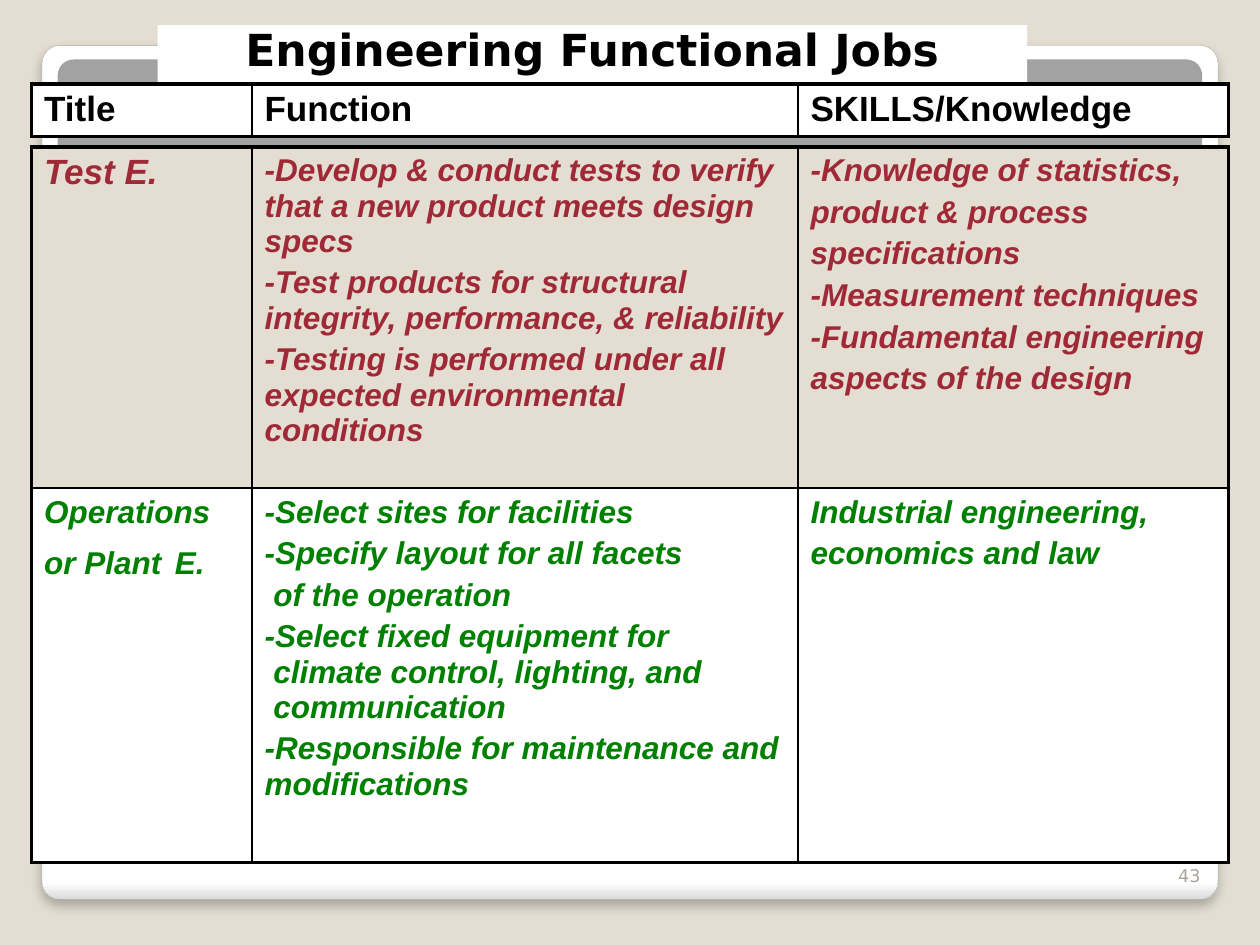
from lxml.etree import SubElement
from pptx import Presentation
from pptx.dml.color import RGBColor
from pptx.enum.shapes import MSO_SHAPE
from pptx.enum.text import MSO_ANCHOR, PP_ALIGN
from pptx.oxml.ns import qn
from pptx.util import Pt

COLORS = {
    "beige": "E3DED1", "white": "FFFFFF", "black": "000000",
    "edge": "DADADA", "outline": "A4A4A4", "band": "A2A2A2",
    "red": "9F2936", "green": "008000", "number": "A8A49B",
}
COLUMNS = (126, 312, 246)
THICK, THIN = 2.25, 1
HANGING, INDENTED = (5, -5), (5, 0)

HEADER = [[["Title"], ["Function"], ["SKILLS/Knowledge"]]]
JOBS = [
    [
        [[("Test E.", 20)]],
        ["-Develop & conduct tests to verify that a new product meets design specs",
         "-Test products for structural integrity, performance, & reliability",
         "-Testing is performed under all expected environmental conditions"],
        ["-Knowledge of statistics,", "product & process", "specifications",
         "-Measurement techniques", "-Fundamental engineering", "aspects of the design"],
    ],
    [
        [[("Operations or Plant", 18), (" ", 28), ("E.", 18)]],
        ["-Select sites for facilities",
         "-Specify layout for all facets",
         "of the operation",
         "-Select fixed equipment for\nclimate control, lighting, and\ncommunication",
         "-Responsible for maintenance and modifications"],
        ["Industrial engineering,", "economics and law"],
    ],
]
INDENTS = {
    "of the operation": INDENTED,
    "-Select fixed equipment for\nclimate control, lighting, and\ncommunication": HANGING,
}


def rgb(name):
    """Return the palette colour of that name."""
    return RGBColor.from_string(COLORS[name])


def add_run(paragraph, text, size, color, font="Arial", bold=True, italic=False):
    """Add one formatted run to a paragraph."""
    run = paragraph.add_run()
    run.text = text
    run.font.size, run.font.name = Pt(size), font
    run.font.bold, run.font.italic = bold, italic
    run.font.color.rgb = rgb(color)


def add_panel(slide, box, fill):
    """Add a rounded panel without line or shadow."""
    panel = slide.shapes.add_shape(MSO_SHAPE.ROUNDED_RECTANGLE, *map(Pt, box))
    panel.adjustments[0] = 0.021
    panel.shadow.inherit = False
    panel.fill.solid()
    panel.fill.fore_color.rgb = rgb(fill)
    panel.line.fill.background()
    return panel


def add_backdrop(slide, box):
    """Add the white card with its soft shadow and the grey band inside it."""
    left, top, width, height = box
    card = add_panel(slide, box, "white")
    card.fill.gradient()
    card.fill.gradient_angle = 270
    for stop, color, position in zip(card.fill.gradient_stops, ("white", "edge"), (0.98, 1)):
        stop.color.rgb, stop.position = rgb(color), position
    card.line.color.rgb, card.line.width = rgb("outline"), Pt(0.16)
    effects = card.element.spPr.find(qn("a:effectLst"))
    shadow = SubElement(effects, qn("a:outerShdw"), blurRad=str(Pt(6)), dist=str(Pt(4)),
                        dir="5400000", algn="t", rotWithShape="0")
    shade = SubElement(shadow, qn("a:srgbClr"), val=COLORS["black"])
    SubElement(shade, qn("a:alpha"), val="25000")
    add_panel(slide, (left + 9, top + 8, width - 18, height - 56), "band")


def add_borders(cell, widths):
    """Draw the left, right, top and bottom borders of a cell."""
    properties = cell._tc.get_or_add_tcPr()
    for side, width in zip("LRTB", widths):
        line = SubElement(properties, qn(f"a:ln{side}"), w=str(Pt(width)))
        fill = SubElement(line, qn("a:solidFill"))
        SubElement(fill, qn("a:srgbClr"), val=COLORS["black"])


def fill_cell(cell, paragraphs, size, color, italic):
    """Write the paragraphs of a cell, each a string or a list of sized runs."""
    for index, content in enumerate(paragraphs):
        frame = cell.text_frame
        paragraph = frame.add_paragraph() if index else frame.paragraphs[0]
        runs = [(content, size)] if isinstance(content, str) else content
        paragraph.space_before = Pt(0.2 * runs[0][1])
        if isinstance(content, str) and content in INDENTS:
            margin, indent = INDENTS[content]
            properties = paragraph._p.get_or_add_pPr()
            properties.set("marL", str(Pt(margin)))
            properties.set("indent", str(Pt(indent)))
        for text, run_size in runs:
            for number, line in enumerate(text.split("\n")):
                if number:
                    paragraph.add_line_break()
                add_run(paragraph, line, run_size, color, italic=italic)


def add_grid(slide, origin, rows, heights, styles, size, italic):
    """Add a table with a thick frame, thin inner lines and one style per row."""
    box = (*origin, sum(COLUMNS), sum(heights))
    grid = slide.shapes.add_table(len(rows), len(COLUMNS), *map(Pt, box)).table
    grid.first_row = grid.horz_banding = False
    for column, width in zip(grid.columns, COLUMNS):
        column.width = Pt(width)
    for r, (row, height, (fill, color)) in enumerate(zip(rows, heights, styles)):
        grid.rows[r].height = Pt(height)
        for c, paragraphs in enumerate(row):
            cell = grid.cell(r, c)
            outer = (c == 0, c == len(COLUMNS) - 1, r == 0, r == len(rows) - 1)
            add_borders(cell, [THICK if edge else THIN for edge in outer])
            cell.fill.solid()
            cell.fill.fore_color.rgb = rgb(fill)
            fill_cell(cell, paragraphs, size, color, italic)


def add_title(slide, box):
    """Add the slide title on its white strip."""
    strip = slide.shapes.add_shape(MSO_SHAPE.RECTANGLE, *map(Pt, box))
    strip.shadow.inherit = False
    strip.fill.solid()
    strip.fill.fore_color.rgb = rgb("white")
    strip.line.fill.background()
    frame = strip.text_frame
    frame.word_wrap = True
    frame.vertical_anchor = MSO_ANCHOR.BOTTOM
    frame.paragraphs[0].alignment = PP_ALIGN.CENTER
    add_run(frame.paragraphs[0], "Engineering Functional Jobs", 25.2, "black", "DejaVu Sans")


def add_page_number(slide, box):
    """Add the page number in the lower right corner."""
    frame = slide.shapes.add_textbox(*map(Pt, box)).text_frame
    frame.word_wrap = True
    frame.vertical_anchor = MSO_ANCHOR.BOTTOM
    frame.paragraphs[0].alignment = PP_ALIGN.RIGHT
    add_run(frame.paragraphs[0], "43", 10, "number", "DejaVu Sans", bold=False)


def main():
    """Build the slide and save it."""
    deck = Presentation()
    deck.slide_width, deck.slide_height = Pt(720), Pt(540)
    slide = deck.slides.add_slide(deck.slide_layouts[6])
    slide.background.fill.solid()
    slide.background.fill.fore_color.rgb = rgb("beige")
    add_backdrop(slide, (24, 26, 672, 488))
    add_grid(slide, (18, 84), JOBS, (195, 214),
             (("beige", "red"), ("white", "green")), 18, True)
    add_grid(slide, (18, 48), HEADER, (30,), (("white", "black"),), 20, False)
    add_page_number(slide, (657, 481, 36, 29))
    add_title(slide, (90, 14.4, 497, 32.4))
    deck.save("out.pptx")


if __name__ == "__main__":
    main()
